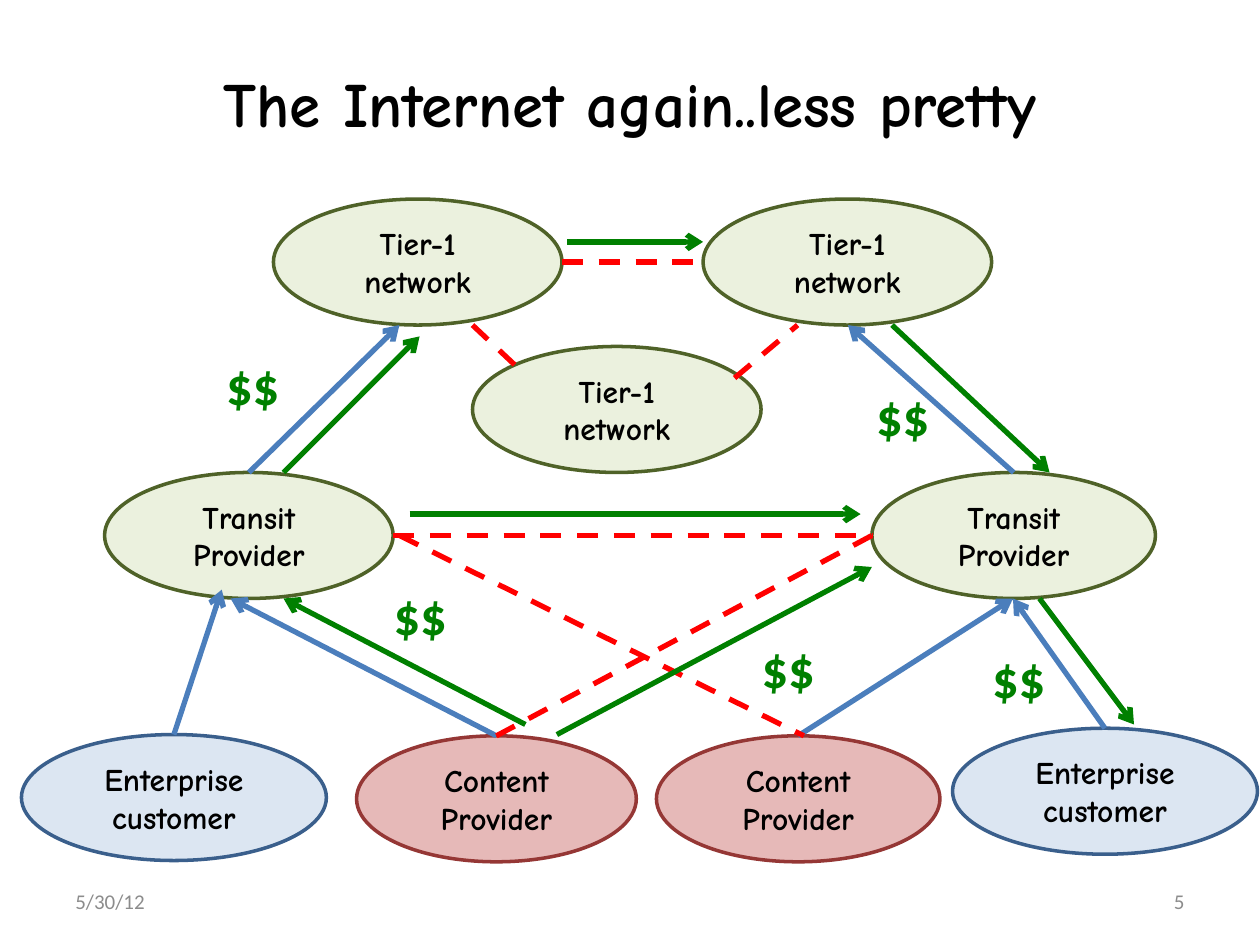
from dataclasses import dataclass

from lxml import etree
from pptx import Presentation
from pptx.dml.color import RGBColor
from pptx.enum.dml import MSO_LINE
from pptx.enum.shapes import MSO_CONNECTOR, MSO_SHAPE
from pptx.enum.text import MSO_ANCHOR, PP_ALIGN
from pptx.oxml.ns import qn
from pptx.util import Inches, Pt

LEFT, CENTER, RIGHT = PP_ALIGN.LEFT, PP_ALIGN.CENTER, PP_ALIGN.RIGHT
TOP, MIDDLE = MSO_ANCHOR.TOP, MSO_ANCHOR.MIDDLE
SITE_TOP = 0
TITLE_ONLY = 5


@dataclass(frozen=True)
class Theme:
    heading: str = "Comic Neue"
    body: str = "Calibri"
    title_size: int = 36
    money_size: int = 30
    node_size: int = 18
    footer_size: int = 12
    node_line: int = 2
    link_line: int = 3
    text: str = "000000"
    muted: str = "8C8C8C"
    customer: str = "4B7EBC"
    peer: str = "FF0000"
    money: str = "008000"
    # fill and outline of each kind of network
    carrier: tuple = ("EBF1DE", "4F6228")
    content: tuple = ("E6B9B8", "953735")
    enterprise: tuple = ("DCE6F2", "3A5F8C")


T = Theme()

# name: (label, colours, left, top, width), relative to the diagram
NODE_HEIGHT = 1
NODES = {
    "tier1_left": ("Tier-1 network", T.carrier, 2.17, 0, 2.29),
    "tier1_right": ("Tier-1 network", T.carrier, 5.58, 0, 2.29),
    "tier1_middle": ("Tier-1 network", T.carrier, 3.75, 1.17, 2.29),
    "transit_left": ("Transit Provider", T.carrier, 0.83, 2.17, 2.29),
    "transit_right": ("Transit Provider", T.carrier, 6.92, 2.17, 2.25),
    "enterprise_left": ("Enterprise customer", T.enterprise, 0.17, 4.25, 2.42),
    "content_left": ("Content Provider", T.content, 2.83, 4.26, 2.22),
    "content_right": ("Content Provider", T.content, 5.21, 4.26, 2.25),
    "enterprise_right": ("Enterprise customer", T.enterprise, 7.56, 4.2, 2.42),
}

# Each end is a point, or the name of a node to join at its top
CUSTOMER_LINKS = [
    ("transit_left", (3.17, 1)),
    ("transit_right", (6.73, 1)),
    ("enterprise_left", (1.76, 3.1)),
    ("enterprise_right", (8.04, 3.17)),
    ("content_left", (1.83, 3.17)),
    ("content_right", (8.04, 3.17)),
]
PEER_LINKS = [
    ((3.12, 2.67), (6.92, 2.67)),
    ((3.17, 2.67), (6.38, 4.26)),
    ((6.92, 2.67), "content_left"),
    ((4.46, 0.5), (5.58, 0.5)),
    ((5.83, 1.42), (6.33, 1)),
    ((3.75, 1), (4.09, 1.32)),
]
MONEY_FLOWS = [
    ((4.17, 4.17), (2.25, 3.17)),
    ((8.25, 3.17), (9, 4.17)),
    ((2.25, 2.17), (3.33, 1.09)),
    ((7.08, 1), (8.33, 2.17)),
    ((4.5, 0.34), (5.58, 0.34)),
    ((3.25, 2.5), (6.83, 2.5)),
    ((4.42, 4.25), (6.92, 2.92)),
]
MONEY_SIGNS = [(1.67, 1.17), (3, 3), (6.83, 1.42), (7.75, 3.5), (5.92, 3.42)]


def write(shape, text, font, size, color, align=CENTER, anchor=MIDDLE, bold=False):
    tf = shape.text_frame
    tf.word_wrap = True
    tf.vertical_anchor = anchor
    tf.text = text
    p = tf.paragraphs[0]
    p.alignment = align
    p.font.name, p.font.size, p.font.bold = font, Pt(size), bold
    p.font.color.rgb = RGBColor.from_string(color)


def add_text(s, box, text, *style, **options):
    write(s.shapes.add_textbox(*map(Inches, box)), text, *style, **options)


def add_node(s, box, label, colors):
    sp = s.shapes.add_shape(MSO_SHAPE.OVAL, *map(Inches, box))
    sp.shadow.inherit = False
    fill, line = map(RGBColor.from_string, colors)
    sp.fill.solid()
    sp.fill.fore_color.rgb = fill
    sp.line.color.rgb = line
    sp.line.width = Pt(T.node_line)
    write(sp, label, T.heading, T.node_size, T.text, bold=True)
    return sp


def add_link(s, origin, nodes, start, end, color, dashed=False):
    """Draw a dashed line, or a solid one with an arrowhead at its end."""
    points = [(0, 0) if isinstance(e, str) else e for e in (start, end)]
    coords = [Inches(o + v) for point in points for o, v in zip(origin, point)]
    link = s.shapes.add_connector(MSO_CONNECTOR.STRAIGHT, *coords)
    if isinstance(start, str):
        link.begin_connect(nodes[start], SITE_TOP)
    if isinstance(end, str):
        link.end_connect(nodes[end], SITE_TOP)
    link.line.color.rgb = RGBColor.from_string(color)
    link.line.width = Pt(T.link_line)
    if dashed:
        link.line.dash_style = MSO_LINE.DASH
    else:
        etree.SubElement(link.line._get_or_add_ln(), qn("a:tailEnd"), type="arrow")
    etree.SubElement(link._element.spPr, qn("a:effectLst"))


def add_title(s, box, text):
    title = s.shapes.title
    title.left, title.top, title.width, title.height = map(Inches, box)
    write(title, text, T.heading, T.title_size, T.text, bold=True)


def add_diagram(s, x, y):
    nodes = {
        name: add_node(s, (x + left, y + top, width, NODE_HEIGHT), label, colors)
        for name, (label, colors, left, top, width) in NODES.items()
    }
    for links, color, dashed in (
        (CUSTOMER_LINKS, T.customer, False),
        (PEER_LINKS, T.peer, True),
        (MONEY_FLOWS, T.money, False),
    ):
        for start, end in links:
            add_link(s, (x, y), nodes, start, end, color, dashed)
    for left, top in MONEY_SIGNS:
        add_text(s, (x + left, y + top, 0.67, 0.61), "$$", T.body, T.money_size,
                 T.money, anchor=TOP, bold=True)


def add_footer(s, x, y, width, height, date, number):
    part = 2.33
    style = (T.body, T.footer_size, T.muted)
    add_text(s, (x, y, part, height), date, *style, align=LEFT)
    add_text(s, (x + width - part, y, part, height), number, *style, align=RIGHT)


def main():
    prs = Presentation()
    prs.slide_width, prs.slide_height = Inches(10), Inches(7.5)
    s = prs.slides.add_slide(prs.slide_layouts[TITLE_ONLY])
    add_title(s, (0.5, 0.33, 9, 0.97), "The Internet again..less pretty")
    add_diagram(s, 0, 1.58)
    add_footer(s, 0.5, 6.95, 9, 0.4, "5/30/12", "5")
    prs.save("out.pptx")


if __name__ == "__main__":
    main()
